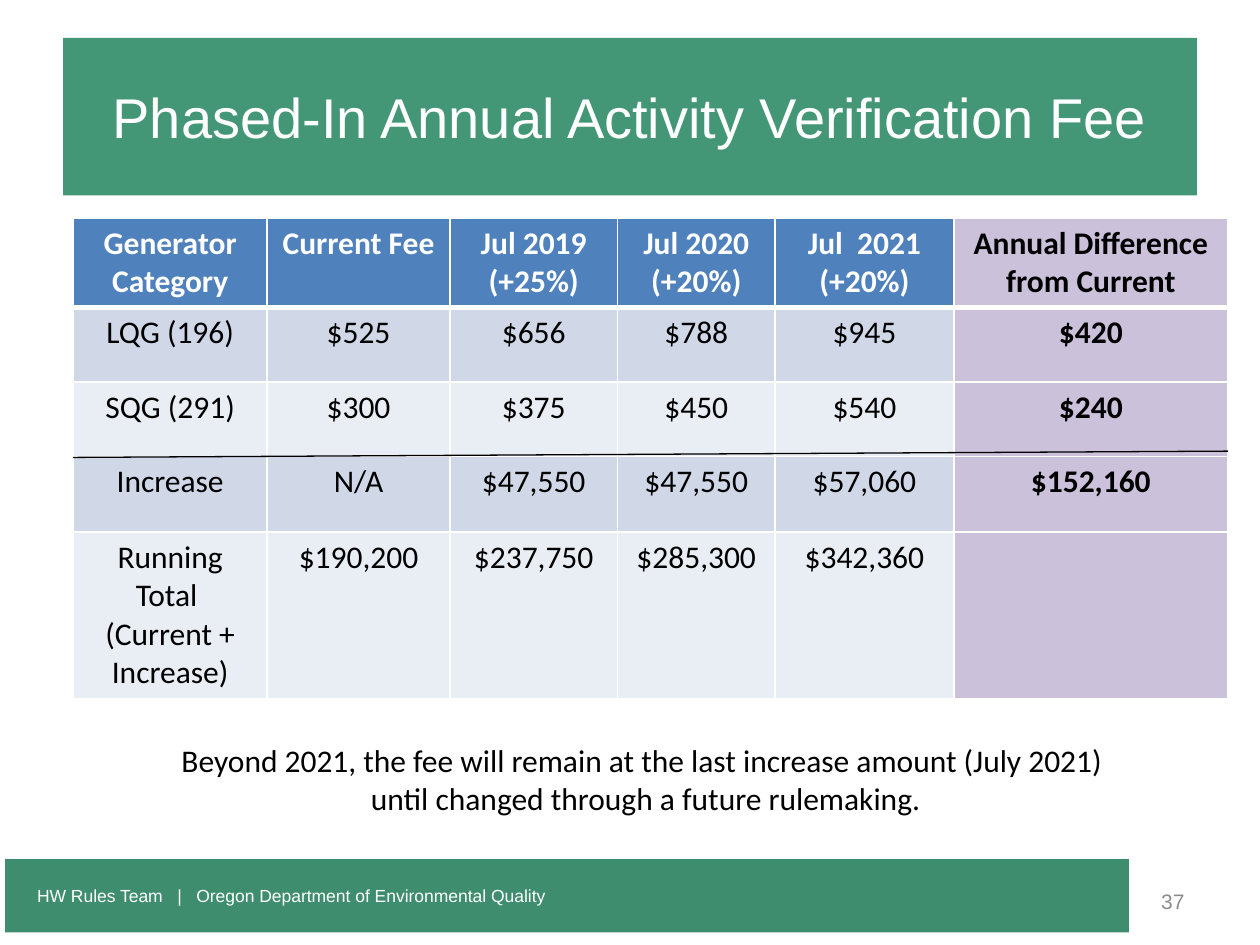
import pptx
import pptx.dml.color
import pptx.enum.shapes
import pptx.enum.text
import pptx.oxml
import pptx.oxml.ns
import pptx.util

Pt = pptx.util.Pt
RGBColor = pptx.dml.color.RGBColor
ALIGN = pptx.enum.text.PP_ALIGN
MIDDLE = pptx.enum.text.MSO_ANCHOR.MIDDLE

WHITE = RGBColor(0xFF, 0xFF, 0xFF)
BLACK = RGBColor(0x00, 0x00, 0x00)
GRAY = RGBColor(0x8C, 0x8C, 0x8C)
TITLE_GREEN = RGBColor(0x43, 0x97, 0x77)
FOOTER_GREEN = RGBColor(0x3F, 0x8D, 0x6F)
HEADER_BLUE = RGBColor(0x4F, 0x81, 0xBD)
LILAC = RGBColor(0xCC, 0xC1, 0xDA)
BANDS = (RGBColor(0xE9, 0xED, 0xF4), RGBColor(0xD0, 0xD8, 0xE8))

TABLE_LEFT, TABLE_TOP = 41.8, 124.6
COLUMN_WIDTHS = (110.9, 104.4, 95.8, 90, 102.2, 156.6)
ROW_HEIGHTS = (44.6, 42.5, 42.5, 43.2, 83.5)
FEES = (
    ("Generator Category", "Current Fee", "Jul 2019 (+25%)", "Jul 2020\n(+20%)",
     "Jul  2021\n(+20%)", "Annual Difference\nfrom Current"),
    ("LQG (196)", "$525", "$656", "$788", "$945", "$420"),
    ("SQG (291)", "$300", "$375", "$450", "$540", "$240"),
    ("Increase", "N/A", "$47,550", "$47,550", "$57,060", "$152,160"),
    ("Running Total  (Current + Increase)", "$190,200", "$237,750", "$285,300",
     "$342,360", ""),
)


def fill_solid(target, color):
    target.fill.solid()
    target.fill.fore_color.rgb = color


def write_text(frame, text, color, align=ALIGN.CENTER, **font_format):
    frame.text = text
    for para in frame.paragraphs:
        para.alignment = align
        para.font.color.rgb = color
        for name, value in font_format.items():
            setattr(para.font, name, value)


def add_title(page, text):
    title = page.shapes.title
    place = {"left": 36, "top": 21.6, "width": 648, "height": 90}
    for name, value in place.items():
        setattr(title, name, Pt(value))
    fill_solid(title, TITLE_GREEN)
    title.text_frame.vertical_anchor = MIDDLE
    write_text(title.text_frame, text, WHITE, name="Arial", size=Pt(32))


def add_panel(page, place, color):
    box = page.shapes.add_shape(
        pptx.enum.shapes.MSO_SHAPE.RECTANGLE, *map(Pt, place))
    box.shadow.inherit = False
    box.line.fill.background()
    fill_solid(box, color)
    return box.text_frame


def set_borders(cell, top, bottom):
    properties = cell._tc.get_or_add_tcPr()
    widths = {"lnL": 1, "lnR": 1, "lnT": top, "lnB": bottom}
    for position, (tag, width) in enumerate(widths.items()):
        border = pptx.oxml.parse_xml(
            f'<a:{tag} {pptx.oxml.ns.nsdecls("a")} w="{Pt(width)}">'
            f'<a:solidFill><a:srgbClr val="{WHITE}"/></a:solidFill></a:{tag}>')
        properties.insert(position, border)


def add_fee_table(page):
    frame = page.shapes.add_table(
        len(FEES), len(COLUMN_WIDTHS), Pt(TABLE_LEFT), Pt(TABLE_TOP),
        Pt(sum(COLUMN_WIDTHS)), Pt(sum(ROW_HEIGHTS)))
    table = frame.table
    for column, width in zip(table.columns, COLUMN_WIDTHS):
        column.width = Pt(width)
    for row, height in zip(table.rows, ROW_HEIGHTS):
        row.height = Pt(height)
    last_column = len(COLUMN_WIDTHS) - 1
    for row_index, values in enumerate(FEES):
        header = row_index == 0
        for column_index, value in enumerate(values):
            cell = table.cell(row_index, column_index)
            difference = column_index == last_column
            band = HEADER_BLUE if header else BANDS[row_index % 2]
            fill_solid(cell, LILAC if difference else band)
            set_borders(cell, 3 if row_index == 1 else 1, 3 if header else 1)
            write_text(cell.text_frame, value,
                       WHITE if header and not difference else BLACK,
                       name="Calibri", size=Pt(18), bold=header or difference)


def add_divider(page, start, end):
    line = page.shapes.add_connector(
        pptx.enum.shapes.MSO_CONNECTOR.STRAIGHT, *map(Pt, start + end))
    line.line.color.rgb = BLACK
    line.line.width = Pt(0.75)
    line._element.spPr.append(
        pptx.oxml.parse_xml(f'<a:effectLst {pptx.oxml.ns.nsdecls("a")}/>'))


def add_footer(page):
    frame = add_panel(page, (2.9, 491, 642.2, 41.8), FOOTER_GREEN)
    frame.margin_left = Pt(18.3)
    frame.vertical_anchor = MIDDLE
    write_text(frame, "HW Rules Team   |   Oregon Department of Environmental Quality",
               WHITE, ALIGN.LEFT, name="Arial", size=Pt(10))


def add_page_number(page, number):
    box = page.shapes.add_textbox(*map(Pt, (516.2, 500.4, 167.8, 28.8)))
    box.text_frame.word_wrap = True
    box.text_frame.vertical_anchor = MIDDLE
    write_text(box.text_frame, number, GRAY, ALIGN.RIGHT, name="Arial", size=Pt(12))


def add_note(page, text):
    frame = add_panel(page, (36, 419.8, 666, 51.1), WHITE)
    frame.vertical_anchor = pptx.enum.text.MSO_ANCHOR.TOP
    write_text(frame, text, BLACK, name="Calibri", size=Pt(18))


def main():
    deck = pptx.Presentation()
    deck.slide_width, deck.slide_height = Pt(720), Pt(540)
    page = deck.slides.add_slide(deck.slide_layouts.get_by_name("Title Only"))
    add_title(page, "Phased-In Annual Activity Verification Fee")
    add_fee_table(page)
    add_footer(page)
    add_page_number(page, "37")
    add_note(page, "Beyond 2021, the fee will remain at the last increase amount "
                   "(July 2021) \nuntil changed through a future rulemaking.")
    add_divider(page, (TABLE_LEFT, 261.4),
                (TABLE_LEFT + sum(COLUMN_WIDTHS), 257.8))
    deck.save("out.pptx")


if __name__ == "__main__":
    main()
